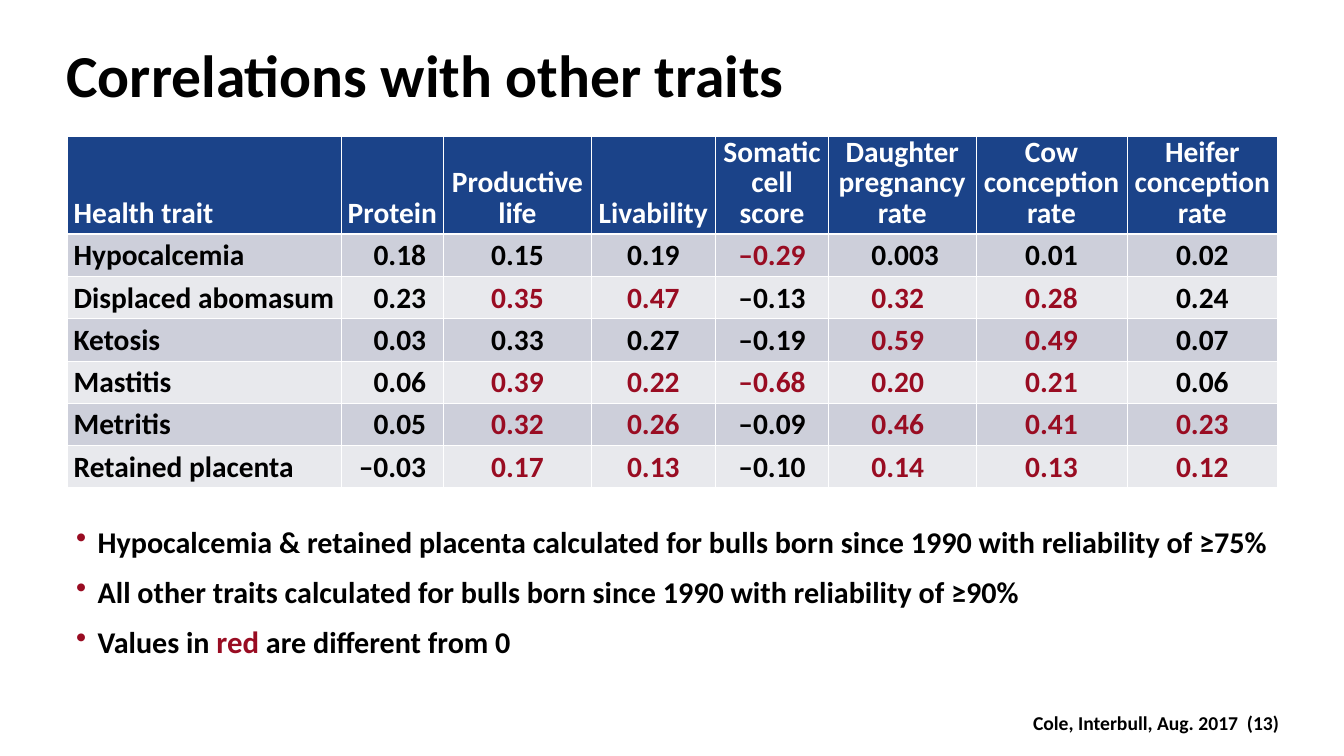
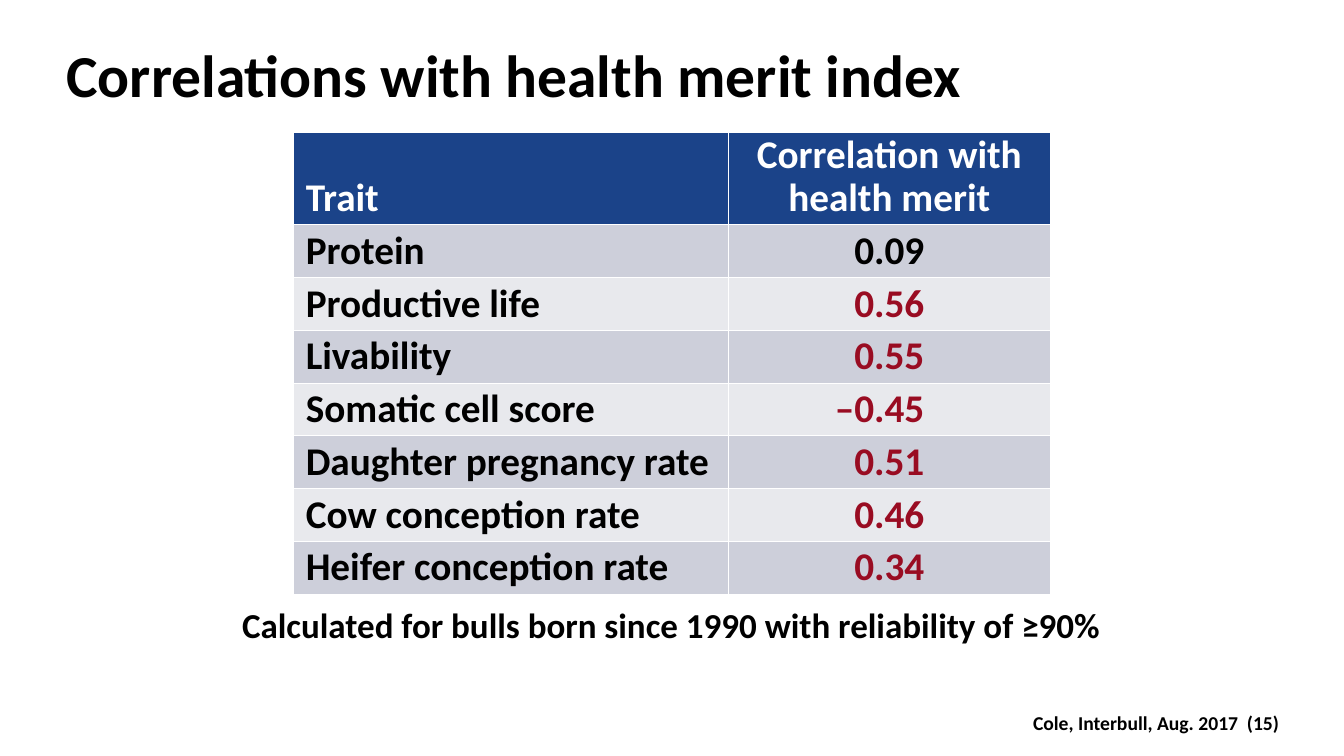
from lxml.etree import SubElement
from pptx import Presentation
from pptx.dml.color import RGBColor
from pptx.enum.text import MSO_ANCHOR as ANCHOR, MSO_AUTO_SIZE as AUTO_SIZE, PP_ALIGN as ALIGN
from pptx.oxml.ns import qn
from pptx.util import Cm, Pt

FONT = "Calibri"
COLORS = {
    "text": "000000",
    "red": "990C22",
    "header": "1B4389",
    "header_text": "FFFFFF",
    "border": "FFFFFF",
    "odd_row": "CDCFDA",
    "even_row": "E8E9ED",
}
LEFT, CENTER, RIGHT = ALIGN.LEFT, ALIGN.CENTER, ALIGN.RIGHT
TITLE_LEFT, CONTENT_WIDTH = 3.35, 60.96


def rgb(name):
    return RGBColor.from_string(COLORS[name])


def add_solid_fill(parent, color):
    fill = SubElement(parent, qn("a:solidFill"))
    SubElement(fill, qn("a:srgbClr"), val=COLORS[color])


def add_bullet(p, indent):
    pPr = p._p.get_or_add_pPr()
    pPr.set("marL", str(Cm(indent)))
    pPr.set("indent", str(-Cm(indent)))
    color = SubElement(pPr, qn("a:buClr"))
    SubElement(color, qn("a:srgbClr"), val=COLORS["red"])
    SubElement(pPr, qn("a:buChar"), char="•")


def set_borders(cell, top=1, bottom=1):
    """Draw the four cell borders; widths are in points."""
    tcPr = cell._tc.get_or_add_tcPr()
    for side, width in (("L", 1), ("R", 1), ("T", top), ("B", bottom)):
        add_solid_fill(SubElement(tcPr, qn(f"a:ln{side}"), w=str(Pt(width))), "border")


def write(tf, text, size, color="text", align=LEFT, spacing=None, bullet=None, red_size=None):
    """Fill a text frame: one paragraph a line, with *red* parts between asterisks."""
    for i, line in enumerate(text.split("\n")):
        p = tf.add_paragraph() if i else tf.paragraphs[0]
        if bullet:
            add_bullet(p, bullet)
        p.alignment = align
        if spacing:
            p.line_spacing = Pt(spacing)
        for j, part in enumerate(line.split("*")):
            if not part:
                continue
            is_red = j % 2 == 1
            r = p.add_run()
            r.text = part
            r.font.name = FONT
            r.font.bold = True
            r.font.size = Pt(red_size if is_red and red_size else size)
            r.font.color.rgb = rgb("red" if is_red else color)


class Deck:
    def __init__(self):
        self.prs = Presentation()
        self.prs.slide_width, self.prs.slide_height = Cm(67.69), Cm(38.1)
        self.slide = None

    def add_slide(self, title, number):
        self.slide = self.prs.slides.add_slide(self.prs.slide_layouts[6])
        self.text(f"Cole, Interbull, Aug. 2017  ({number})", 51.08, 35.71, 13.59, 1.45,
                  inset=(0.25, 0.13), wrap=False, size=28, align=RIGHT)
        self.text(title, TITLE_LEFT, 1.9, CONTENT_WIDTH, 3.63, size=85)

    def text(self, text, x, y, w, h, inset=(0, 0), wrap=True, **style):
        sp = self.slide.shapes.add_textbox(Cm(x), Cm(y), Cm(w), Cm(h))
        tf = sp.text_frame
        tf.word_wrap = wrap
        tf.auto_size = AUTO_SIZE.SHAPE_TO_FIT_TEXT
        tf.margin_left = tf.margin_right = Cm(inset[0])
        tf.margin_top = tf.margin_bottom = Cm(inset[1])
        write(tf, text, **style)

    def table(self, header, rows, x, y, columns, heights, inset, size,
              header_spacing, row_spacing=None):
        """Add a banded table; columns holds (width, alignment, left inset, right inset)."""
        header_height, row_height = heights
        height = header_height + row_height * len(rows)
        width = sum(column[0] for column in columns)
        table = self.slide.shapes.add_table(len(rows) + 1, len(columns), Cm(x), Cm(y),
                                            Cm(width), Cm(height)).table
        for column, (col_width, *_) in zip(table.columns, columns):
            column.width = Cm(col_width)
        for i, values in enumerate([header, *rows]):
            table.rows[i].height = Cm(row_height if i else header_height)
            fill = ("odd_row" if i % 2 else "even_row") if i else "header"
            for j, (_, align, left, right) in enumerate(columns):
                cell = table.cell(i, j)
                set_borders(cell, top=3 if i == 1 else 1, bottom=1 if i else 3)
                cell.fill.solid()
                cell.fill.fore_color.rgb = rgb(fill)
                cell.vertical_anchor = ANCHOR.BOTTOM
                cell.margin_left = Cm(left if i else inset)
                cell.margin_right = Cm(right if i else inset)
                cell.margin_top = cell.margin_bottom = Cm(0.13)
                if i:
                    write(cell.text_frame, values[j], size, align=align, spacing=row_spacing)
                else:
                    write(cell.text_frame, values[j], size, "header_text",
                          CENTER if j else LEFT, header_spacing)


def add_trait_slide(deck):
    deck.add_slide("Correlations with other traits", 13)
    deck.text("Hypocalcemia & retained placenta calculated for bulls born since 1990"
              " with reliability of ≥75%\n"
              "All other traits calculated for bulls born since 1990 with reliability of ≥90%\n"
              "Values in *red* are different from 0",
              3.58, 25.65, CONTENT_WIDTH, 7.7, inset=(0.25, 0),
              size=43, spacing=72, bullet=1.09, red_size=44)
    header = ["Health trait", "Protein", "Productive\nlife", "Livability", "Somatic cell score",
              "Daughter pregnancy rate", "Cow conception rate", "Heifer conception rate"]
    rows = [
        ["Hypocalcemia", "0.18", "0.15", "0.19", "*–0.29*", "0.003", "0.01", "0.02"],
        ["Displaced abomasum", "0.23", "*0.35*", "*0.47*", "–0.13", "*0.32*", "*0.28*", "0.24"],
        ["Ketosis", "0.03", "0.33", "0.27", "–0.19", "*0.59*", "*0.49*", "0.07"],
        ["Mastitis", "0.06", "*0.39*", "*0.22*", "*–0.68*", "*0.20*", "*0.21*", "0.06"],
        ["Metritis", "0.05", "*0.32*", "*0.26*", "–0.09", "*0.46*", "*0.41*", "*0.23*"],
        ["Retained placenta", "–0.03", "*0.17*", "*0.13*", "–0.10", "*0.14*", "*0.13*", "*0.12*"],
    ]
    inset = 0.33
    columns = [(13.79, LEFT, inset, inset), (5.18, RIGHT, inset, 0.89)]
    columns += [(width, CENTER, inset, inset) for width in (7.42, 6.27, 5.69)]
    columns += [(7.42, LEFT, 2.16, inset)]
    columns += [(width, CENTER, inset, inset) for width in (7.62, 7.57)]
    deck.table(header, rows, 3.38, 6.88, columns, heights=(4.9, 2.13), inset=inset,
               size=42, header_spacing=44)


def add_merit_slide(deck):
    deck.add_slide("Correlations with health merit index", 15)
    deck.text("Calculated for bulls born since 1990 with reliability of ≥90%",
              11.73, 30.4, 44.2, 2.13, size=50, align=CENTER)
    rows = [
        ["Protein", "0.09"],
        ["Productive life", "*0.56*"],
        ["Livability", "*0.55*"],
        ["Somatic cell score", "*–0.45*"],
        ["Daughter pregnancy rate", "*0.51*"],
        ["Cow conception rate", "*0.46*"],
        ["Heifer conception rate", "*0.34*"],
    ]
    inset = 0.64
    columns = [(21.92, LEFT, inset, inset), (16.23, RIGHT, inset, 6.35)]
    deck.table(["Trait", "Correlation with health merit"], rows, 14.76, 6.68, columns,
               heights=(4.62, 2.65), inset=inset, size=56, header_spacing=62, row_spacing=68)


def main():
    deck = Deck()
    add_trait_slide(deck)
    add_merit_slide(deck)
    deck.prs.save("out.pptx")


if __name__ == "__main__":
    main()
